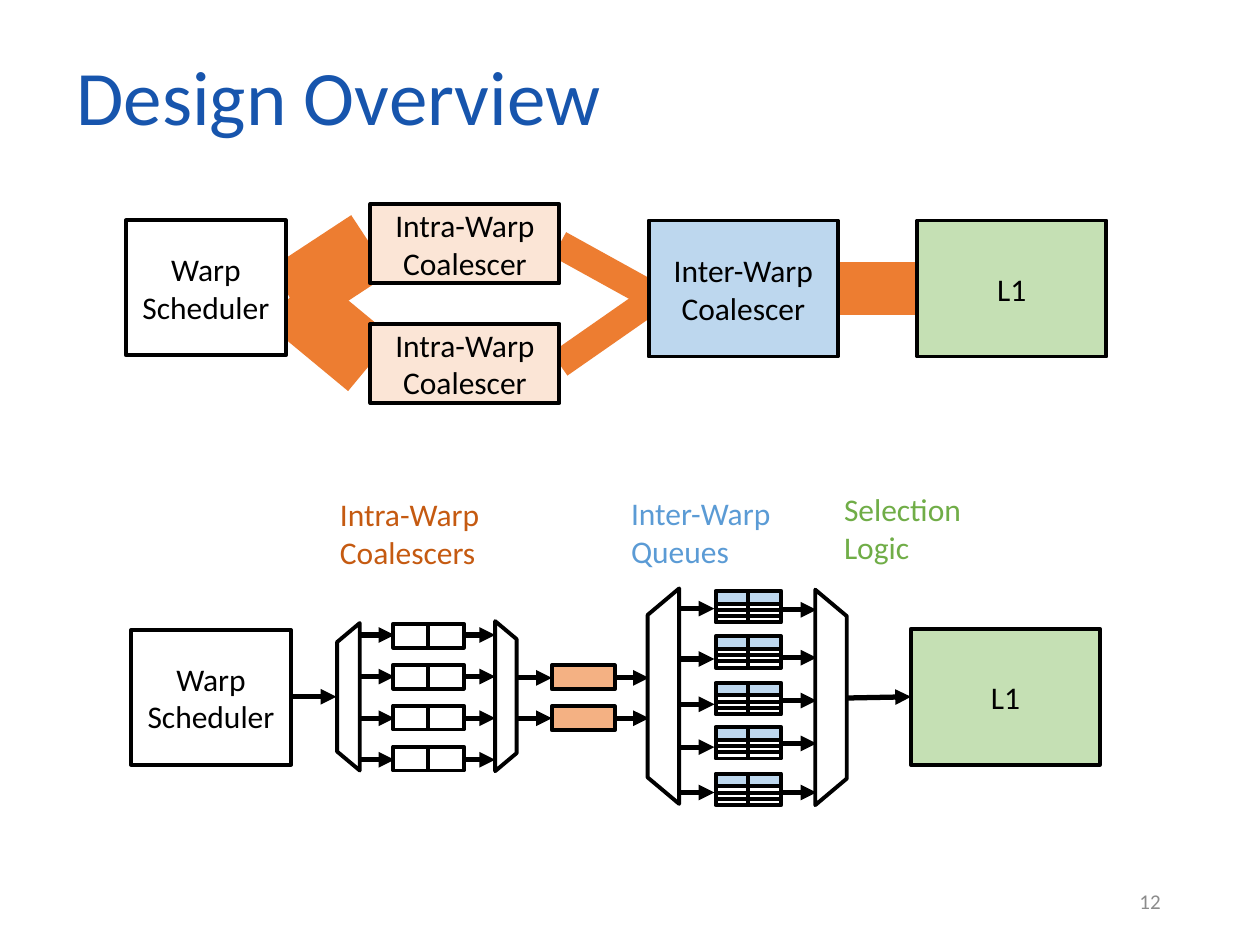
from dataclasses import dataclass
from lxml.etree import SubElement
from pptx import Presentation
from pptx.dml.color import RGBColor
from pptx.enum.shapes import MSO_CONNECTOR as Conn, MSO_SHAPE as Kind
from pptx.enum.text import MSO_ANCHOR as Anchor, PP_ALIGN as Align
from pptx.oxml.ns import qn
from pptx.util import Inches, Pt


@dataclass(frozen=True)
class Theme:
    font: str = "Calibri"
    black: str = "000000"
    white: str = "FFFFFF"
    gray: str = "8C8C8C"
    title: str = "1755AD"
    band: str = "ED7D31"
    peach: str = "FBE5D6"
    amber: str = "F4B183"
    sky: str = "BDD7EE"
    mint: str = "C5E0B4"
    rust: str = "C55A11"
    blue: str = "5B9BD5"
    green: str = "70AD47"
    head: int = 44
    body: int = 18
    small: int = 12
    edge: float = 2.25
    wire: float = 3


theme = Theme()
deck = Presentation()
deck.slide_width, deck.slide_height = Inches(10), Inches(7.5)
slide = deck.slides.add_slide(deck.slide_layouts[6])
shapes = slide.shapes


def write(shape, text, size, color, align, anchor):
    frame = shape.text_frame
    frame.word_wrap = True
    frame.vertical_anchor = anchor
    frame.text = text
    for para in frame.paragraphs:
        para.alignment = align
        for run in para.runs:
            run.font.name = theme.font
            run.font.size = Pt(size)
            run.font.color.rgb = RGBColor.from_string(color)


def link(x1, y1, x2, y2, color=theme.black, width=theme.wire, arrow=True):
    line = shapes.add_connector(Conn.STRAIGHT, Inches(x1), Inches(y1), Inches(x2), Inches(y2))
    line.line.color.rgb = RGBColor.from_string(color)
    line.line.width = Pt(width)
    if arrow:
        SubElement(line.line._get_or_add_ln(), qn("a:tailEnd"), type="triangle")
    SubElement(line._element.spPr, qn("a:effectLst"))


# Bandwidth bands, drawn behind the boxes of the upper row
for x1, y1, x2, y2, width in [
    (6.65, 2.29, 7.28, 2.29, 30),
    (2.3, 2.36, 2.94, 1.94, 40),
    (2.3, 2.36, 2.94, 2.89, 40),
    (4.44, 1.94, 5.2, 2.36, 16),
    (4.44, 2.89, 5.2, 2.36, 16),
]:
    link(x1, y1, x2, y2, theme.band, width, arrow=False)

# Blocks of both rows: left, top, width, height, fill, text
blocks = [
    (2.94, 2.57, 1.5, 0.63, theme.peach, "Intra-Warp Coalescer"),
    (2.94, 1.62, 1.5, 0.63, theme.peach, "Intra-Warp Coalescer"),
    (5.15, 1.75, 1.5, 1.08, theme.sky, "Inter-Warp\nCoalescer"),
    (7.28, 1.75, 1.5, 1.08, theme.mint, "L1"),
    (1, 1.75, 1.27, 1.07, theme.white, "Warp\nScheduler"),
    (1.04, 5, 1.27, 1.07, theme.white, "Warp\nScheduler"),
    (7.23, 4.99, 1.5, 1.08, theme.mint, "L1"),
]

# Intra-warp coalescers: four rows of two cells
pitch = 0.325
for row in range(4):
    for col in range(2):
        blocks.append((3.12 + 0.28 * col, 4.95 + pitch * row, 0.28, 0.19, theme.white, ""))

# Merged requests
for row in range(2):
    blocks.append((4.38, 5.28 + pitch * row, 0.5, 0.19, theme.amber, ""))

# Inter-warp queues: a tinted head above three slots, in two columns
for top in (4.69, 5.05, 5.42, 5.77, 6.14):
    for x in (5.68, 5.94):
        blocks.append((x, top, 0.26, 0.1, theme.sky, ""))
        for slot in range(3):
            blocks.append((x, top + 0.1 + 0.05 * slot, 0.26, 0.05, theme.white, ""))

# Routers between the stages: left, top, width, height, turn
routers = [
    (2.18, 5.44, 1.17, 0.18, 270),
    (3.42, 5.44, 1.19, 0.17, 90),
    (4.41, 5.4, 1.71, 0.25, 270),
    (5.74, 5.41, 1.71, 0.25, 90),
]

# Draw blocks and routers
parts = [(Kind.RECTANGLE, *block, 0) for block in blocks]
parts += [(Kind.TRAPEZOID, *spot, theme.white, "", turn) for *spot, turn in routers]
for kind, x, y, w, h, fill, text, turn in parts:
    part = shapes.add_shape(kind, Inches(x), Inches(y), Inches(w), Inches(h))
    part.shadow.inherit = False
    part.fill.solid()
    part.fill.fore_color.rgb = RGBColor.from_string(fill)
    part.line.color.rgb = RGBColor.from_string(theme.black)
    part.line.width = Pt(theme.edge)
    if turn:
        part.rotation = turn
        part.adjustments[0] = 0.84
    if text:
        write(part, text, theme.body, theme.black, Align.CENTER, Anchor.MIDDLE)

# Arrows between the stages
link(2.31, 5.53, 2.67, 5.53)
link(6.72, 5.54, 7.23, 5.53)
for row in range(4):
    y = 5.04 + 0.33 * row
    link(2.85, y, 3.13, y)
    link(3.68, y, 3.93, y)
for y in (5.38, 5.7):
    link(4.11, y, 4.38, y)
    link(4.87, y, 5.15, y)
for y_in, y_out in [(4.83, 4.84), (5.23, 5.22), (5.59, 5.56), (5.93, 5.9), (6.29, 6.29)]:
    link(5.4, y_in, 5.67, y_in)
    link(6.2, y_out, 6.48, y_out)

# Title, stage labels and page number
for x, y, w, h, text, size, color, align, anchor in [
    (0.51, 0.29, 9, 0.92, "Design Overview", theme.head, theme.title, Align.LEFT, Anchor.MIDDLE),
    (2.6, 3.88, 2.03, 0.71, "Intra-Warp\nCoalescers", theme.body, theme.rust, Align.LEFT, Anchor.TOP),
    (4.91, 3.87, 1.81, 0.71, "Inter-Warp\nQueues", theme.body, theme.blue, Align.LEFT, Anchor.TOP),
    (6.6, 3.84, 1.52, 0.71, "Selection Logic", theme.body, theme.green, Align.LEFT, Anchor.TOP),
    (7.06, 6.95, 2.25, 0.4, "12", theme.small, theme.gray, Align.RIGHT, Anchor.MIDDLE),
]:
    label = shapes.add_textbox(Inches(x), Inches(y), Inches(w), Inches(h))
    write(label, text, size, color, align, anchor)

deck.save("out.pptx")
